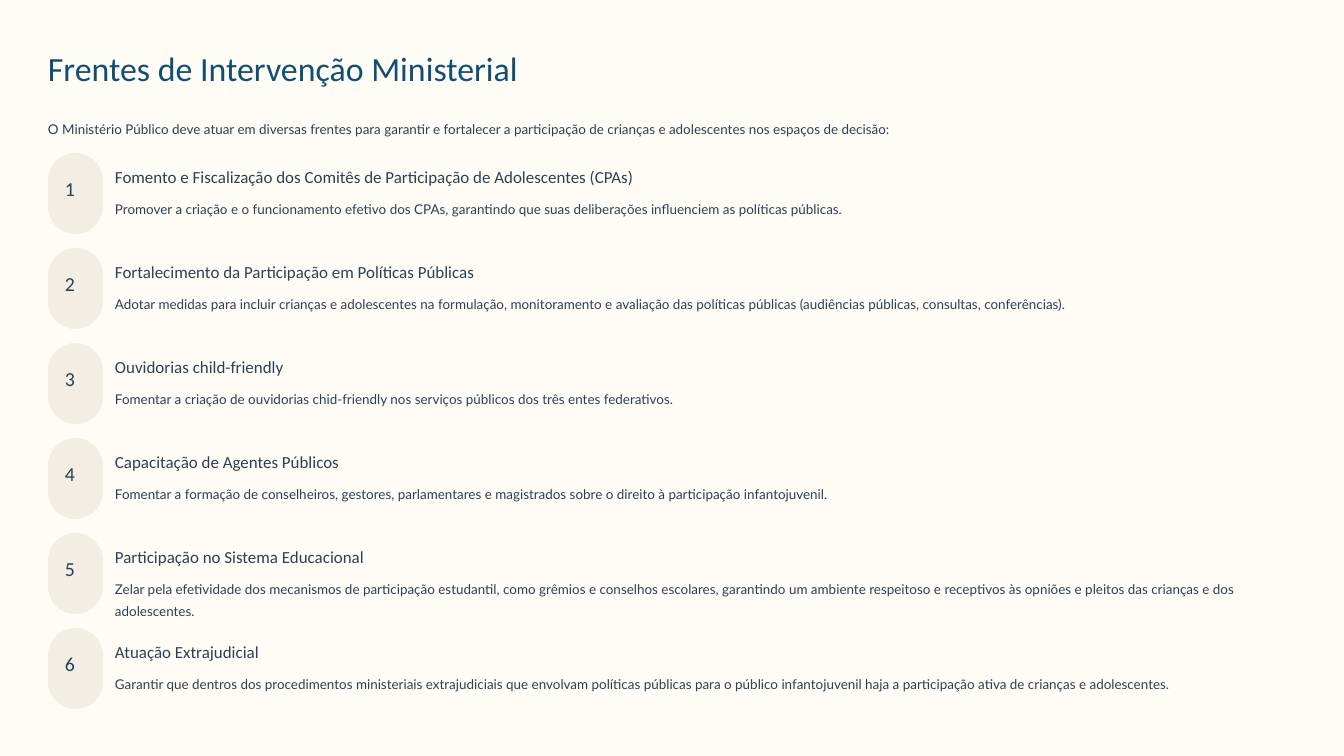
from pptx import Presentation
from pptx.dml.color import RGBColor
from pptx.enum.shapes import MSO_SHAPE
from pptx.enum.text import MSO_ANCHOR, PP_ALIGN
from pptx.util import Emu, Pt

PX_PER_INCH = 84
COLOURS = {"page": "FFFCF5", "heading": "124E73", "text": "2B4150", "badge": "F3EEE3"}

# font, size, line spacing, colour
STYLES = {
    "heading": ("Calibri", 29, 36, "heading"),
    "number": ("Calibri", 17, 17, "text"),
    "front": ("Calibri", 14.5, 18, "text"),
    "body": ("Lato", 11.5, 18.5, "text"),
}

LEFT = 48
FRONT_LEFT = 115
FIRST_TOP = 153
PITCH = 95

# title, width of the title, description
FRONTS = [
    ("Fomento e Fiscalização dos Comitês de Participação de Adolescentes (CPAs)", 617,
     "Promover a criação e o funcionamento efetivo dos CPAs, garantindo que suas "
     "deliberações influenciem as políticas públicas."),
    ("Fortalecimento da Participação em Políticas Públicas", 428,
     "Adotar medidas para incluir crianças e adolescentes na formulação, monitoramento e "
     "avaliação das políticas públicas (audiências públicas, consultas, conferências)."),
    ("Ouvidorias child-friendly", 200,
     "Fomentar a criação de ouvidorias chid-friendly nos serviços públicos dos três "
     "entes federativos."),
    ("Capacitação de Agentes Públicos", 268,
     "Fomentar a formação de conselheiros, gestores, parlamentares e magistrados sobre o "
     "direito à participação infantojuvenil."),
    ("Participação no Sistema Educacional", 298,
     "Zelar pela efetividade dos mecanismos de participação estudantil, como grêmios e "
     "conselhos escolares, garantindo um ambiente respeitoso e receptivos às opniões e "
     "pleitos das crianças e dos adolescentes."),
    ("Atuação Extrajudicial", 173,
     "Garantir que dentros dos procedimentos ministeriais extrajudiciais que envolvam "
     "políticas públicas para o público infantojuvenil haja a participação ativa de "
     "crianças e adolescentes."),
]


def px(length):
    return Emu(round(length * 914400 / PX_PER_INCH))


def colour(name):
    return RGBColor.from_string(COLOURS[name])


def add_line_of_text(slide, text, style, left, top, width, height):
    font_name, size, spacing, ink = STYLES[style]
    frame = slide.shapes.add_textbox(px(left), px(top), px(width), px(height)).text_frame
    frame.margin_left = frame.margin_top = frame.margin_right = frame.margin_bottom = 0
    frame.word_wrap = False
    frame.vertical_anchor = MSO_ANCHOR.TOP
    frame.text = text
    paragraph = frame.paragraphs[0]
    paragraph.alignment = PP_ALIGN.LEFT
    paragraph.line_spacing = Pt(spacing)
    font = paragraph.runs[0].font
    font.name = font_name
    font.size = Pt(size)
    font.color.rgb = colour(ink)


def add_badge(slide, number, top):
    badge = slide.shapes.add_shape(
        MSO_SHAPE.ROUNDED_RECTANGLE, px(LEFT), px(top), px(55), px(81))
    badge.adjustments[0] = 0.5
    badge.shadow.inherit = False
    badge.fill.solid()
    badge.fill.fore_color.rgb = colour("badge")
    badge.line.fill.background()
    add_line_of_text(slide, str(number), "number", 65, top + 28, 20, 25)


def add_front(slide, number, title, title_width, description):
    top = FIRST_TOP + (number - 1) * PITCH
    add_badge(slide, number, top)
    add_line_of_text(slide, title, "front", FRONT_LEFT, top + 13, title_width, 21)
    add_line_of_text(slide, description, "body", FRONT_LEFT, top + 43, 1181, 22)


def main():
    deck = Presentation()
    deck.slide_width, deck.slide_height = px(1344), px(756)
    slide = deck.slides.add_slide(deck.slide_layouts[6])
    slide.background.fill.solid()
    slide.background.fill.fore_color.rgb = colour("page")

    add_line_of_text(slide, "Frentes de Intervenção Ministerial", "heading", LEFT, 46, 563, 42)
    add_line_of_text(
        slide,
        "O Ministério Público deve atuar em diversas frentes para garantir e fortalecer a "
        "participação de crianças e adolescentes nos espaços de decisão:",
        "body", LEFT, 116, 1249, 22)
    for number, front in enumerate(FRONTS, start=1):
        add_front(slide, number, *front)

    deck.save("out.pptx")


if __name__ == "__main__":
    main()
